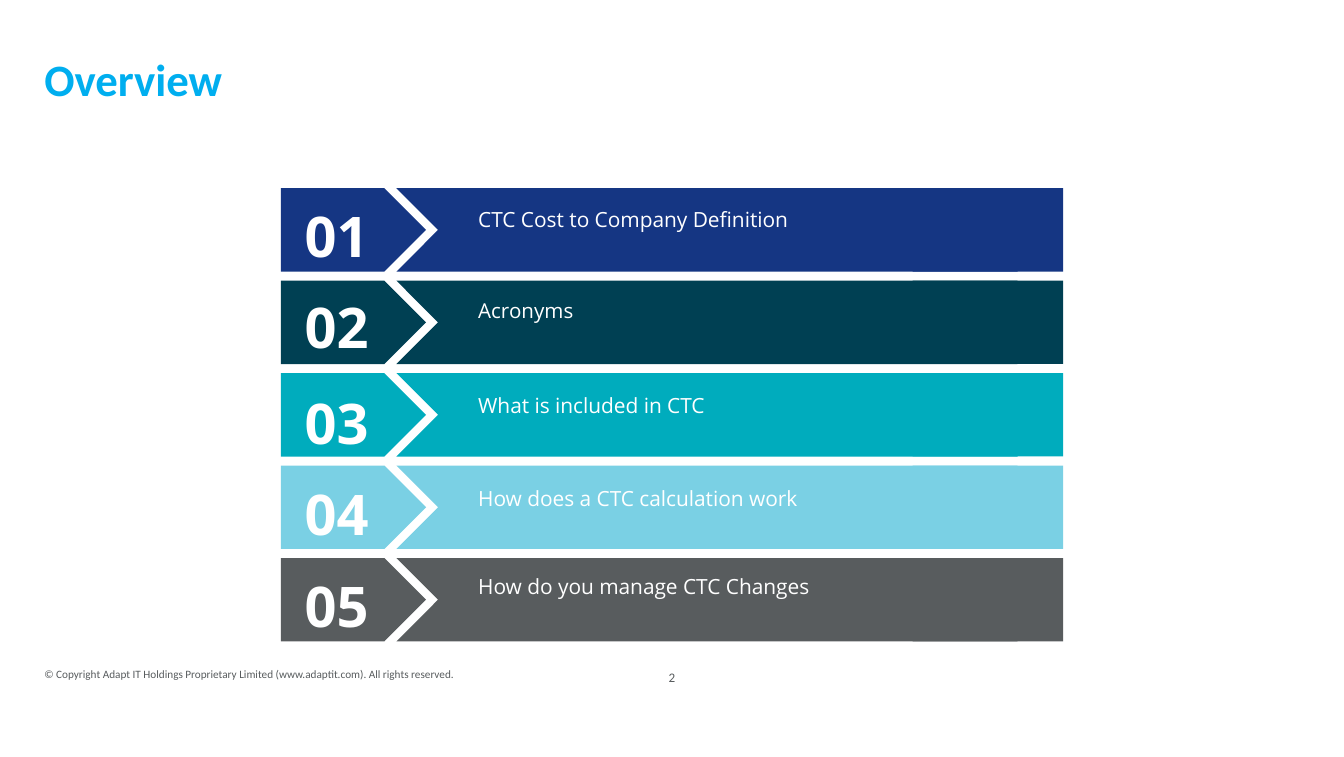
from dataclasses import dataclass

from pptx import Presentation
from pptx.dml.color import RGBColor
from pptx.enum.shapes import MSO_SHAPE as Shape
from pptx.enum.text import MSO_ANCHOR as Anchor, PP_ALIGN as Align
from pptx.util import Inches, Pt

TITLE = "Overview"
COPYRIGHT = "© Copyright Adapt IT Holdings Proprietary Limited (www.adaptit.com). All rights reserved."
PAGE_NUMBER = "2"
# fmt: off
TOPICS = [
    {"label": "CTC Cost to Company Definition", "color": "153683", "size": 11.2, "number_top": 1.45, "label_top": 1.49},
    {"label": "Acronyms", "color": "004053", "size": 11, "number_top": 2.13, "label_top": 2.17},
    {"label": "What is included in CTC", "color": "00ACBD", "size": 11.2, "number_top": 2.84, "label_top": 2.87},
    {"label": "How does a CTC calculation work", "color": "7AD0E4", "size": 11.2, "number_top": 3.52, "label_top": 3.56},
    {"label": "How do you manage CTC Changes", "color": "585C5E", "size": 11.2, "number_top": 4.2, "label_top": 4.22},
]
# fmt: on


@dataclass(frozen=True)
class Theme:
    heading_font: str = "Calibri"
    body_font: str = "Open Sans"
    accent: str = "00AEEF"
    muted: str = "585C5E"
    light: str = "FFFFFF"
    title_size: float = 24
    number_size: float = 30
    copyright_size: float = 6
    page_size: float = 7


THEME = Theme()
SLIDE_WIDTH, SLIDE_HEIGHT = 10, 5.63
MARGIN = 0.33
FOOTER_TOP = 4.78
ROW_TOP, ROW_PITCH, ROW_HEIGHT = 1.4, 0.6875, 0.62
BAND_PARTS = [
    (Shape.PENTAGON, 2.09, 1.08),
    (Shape.CHEVRON, 2.95, 4.93),
    (Shape.RECTANGLE, 6.79, 1.12),
]
NUMBER_COLUMN = (2.14, 0.73)
LABEL_COLUMN = (3.46, 3.38)


def add_text(page, area, text, font, size, color, bold=False,
             align=Align.LEFT, anchor=Anchor.TOP, inset=True, spacing=None):
    box = page.shapes.add_textbox(*map(Inches, area))
    frame = box.text_frame
    frame.word_wrap = True
    frame.vertical_anchor = anchor
    if not inset:
        frame.margin_left = frame.margin_right = 0
        frame.margin_top = frame.margin_bottom = 0
    para = frame.paragraphs[0]
    para.alignment = align
    if spacing:
        para.line_spacing = Pt(spacing)
    span = para.add_run()
    span.text = text
    span.font.name = font
    span.font.size = Pt(size)
    span.font.bold = bold
    span.font.color.rgb = RGBColor.from_string(color)


def add_band(page, top, color):
    for kind, left, width in BAND_PARTS:
        shape = page.shapes.add_shape(
            kind, Inches(left), Inches(top), Inches(width), Inches(ROW_HEIGHT))
        shape.shadow.inherit = False
        shape.fill.solid()
        shape.fill.fore_color.rgb = RGBColor.from_string(color)
        shape.line.fill.background()


def add_frame_text(page):
    add_text(page, (MARGIN, FOOTER_TOP, 3.45, 0.46), COPYRIGHT, THEME.heading_font,
             THEME.copyright_size, THEME.muted, anchor=Anchor.MIDDLE, inset=False)
    add_text(page, (4.31, FOOTER_TOP, 1.38, 0.52), PAGE_NUMBER, THEME.heading_font,
             THEME.page_size, THEME.muted, align=Align.CENTER,
             anchor=Anchor.MIDDLE, inset=False)
    add_text(page, (MARGIN, 0.36, SLIDE_WIDTH - 2 * MARGIN, 0.53), TITLE,
             THEME.heading_font, THEME.title_size, THEME.accent, bold=True,
             anchor=Anchor.MIDDLE, inset=False, spacing=22.6)


def add_topic(page, index, topic):
    add_band(page, ROW_TOP + index * ROW_PITCH, topic["color"])
    left, width = NUMBER_COLUMN
    add_text(page, (left, topic["number_top"], width, 0.54), f"{index + 1:02}",
             THEME.body_font, THEME.number_size, THEME.light, bold=True,
             align=Align.CENTER)
    left, width = LABEL_COLUMN
    add_text(page, (left, topic["label_top"], width, 0.29), topic["label"],
             THEME.body_font, topic["size"], THEME.light, align=Align.JUSTIFY)


def main():
    deck = Presentation()
    deck.slide_width = Inches(SLIDE_WIDTH)
    deck.slide_height = Inches(SLIDE_HEIGHT)
    page = deck.slides.add_slide(deck.slide_layouts[6])
    add_frame_text(page)
    for index, topic in enumerate(TOPICS):
        add_topic(page, index, topic)
    deck.save("out.pptx")


if __name__ == "__main__":
    main()
